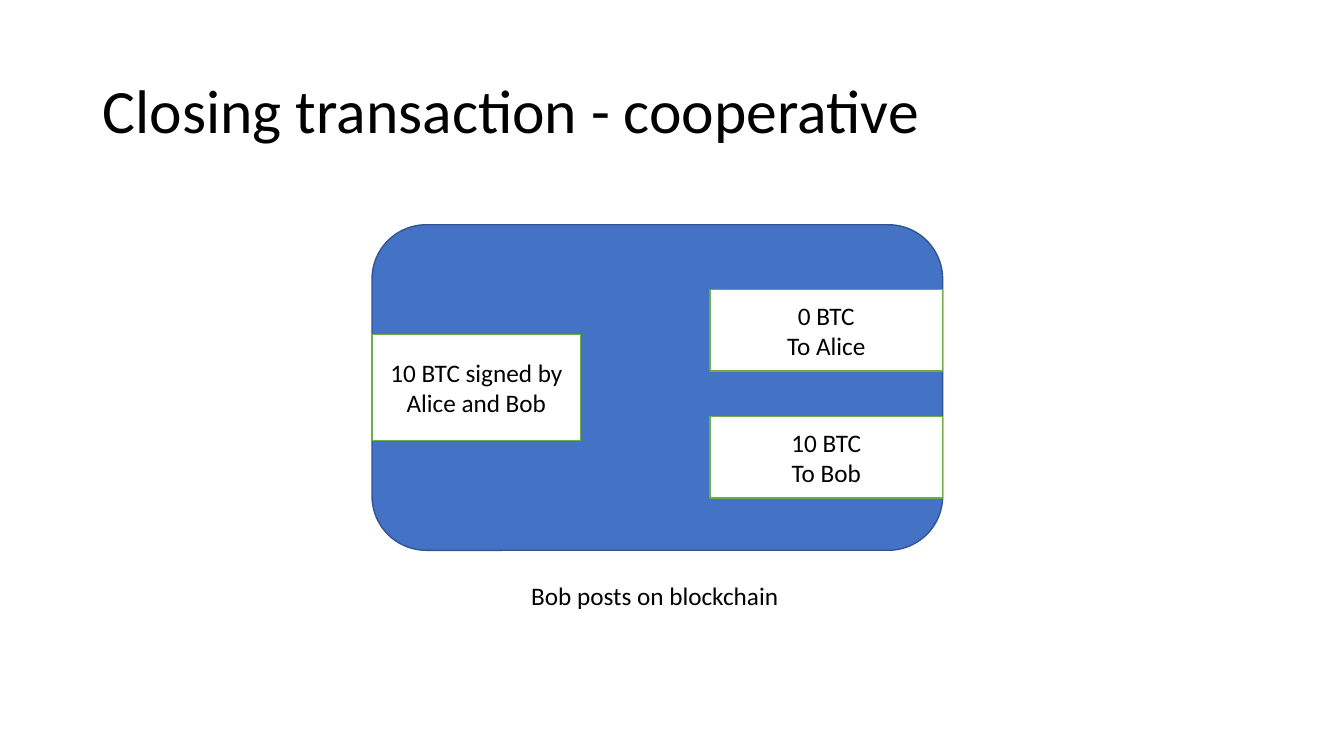
import pptx
import pptx.dml.color
import pptx.enum.shapes
import pptx.enum.text
import pptx.util

Inches = pptx.util.Inches
RGBColor = pptx.dml.color.RGBColor
Shape = pptx.enum.shapes.MSO_SHAPE
Align = pptx.enum.text.PP_ALIGN
Anchor = pptx.enum.text.MSO_ANCHOR

TITLE = "Closing transaction - cooperative"
CAPTION = "Bob posts on blockchain"
INPUT = ["10 BTC signed by Alice and Bob"]
OUTPUTS = [["0 BTC", "To Alice"], ["10 BTC", "To Bob"]]

BLACK = RGBColor(0x00, 0x00, 0x00)
WHITE = RGBColor(0xFF, 0xFF, 0xFF)
BLUE = RGBColor(0x44, 0x72, 0xC4)
DARK_BLUE = RGBColor(0x32, 0x54, 0x91)
GREEN = RGBColor(0x70, 0xAD, 0x47)

# Left, top, width, height in inches
TRANSACTION = (3.69, 2.23, 5.66, 3.23)
INPUT_TOP, INPUT_WIDTH, INPUT_HEIGHT = 3.32, 2.07, 1.05
OUTPUT_TOP, OUTPUT_WIDTH, OUTPUT_HEIGHT = 2.87, 2.31, 0.81
OUTPUT_STEP = 1.26


def write_text(shape, lines, size=18, align=Align.LEFT, anchor=Anchor.MIDDLE,
               wrap=True, line_spacing=None):
    frame = shape.text_frame
    frame.word_wrap = wrap
    frame.vertical_anchor = anchor
    frame.text = "\n".join(lines)
    for paragraph in frame.paragraphs:
        paragraph.alignment = align
        paragraph.line_spacing = line_spacing
        paragraph.font.name = "Calibri"
        paragraph.font.size = pptx.util.Pt(size)
        paragraph.font.color.rgb = BLACK


def add_box(slide, kind, bounds, fill, line):
    shape = slide.shapes.add_shape(kind, *map(Inches, bounds))
    shape.shadow.inherit = False
    shape.fill.solid()
    shape.fill.fore_color.rgb = fill
    shape.line.color.rgb = line
    shape.line.width = pptx.util.Pt(1)
    return shape


def add_label_box(slide, lines, bounds):
    box = add_box(slide, Shape.RECTANGLE, bounds, WHITE, GREEN)
    write_text(box, lines, align=Align.CENTER)


def main():
    presentation = pptx.Presentation()
    presentation.slide_width = Inches(13.33)
    presentation.slide_height = Inches(7.5)
    slide = presentation.slides.add_slide(presentation.slide_layouts[5])

    title = slide.shapes.title
    title.left, title.top = Inches(0.92), Inches(0.4)
    title.width, title.height = Inches(11.5), Inches(1.45)
    write_text(title, [TITLE], size=44, line_spacing=0.9)

    add_box(slide, Shape.ROUNDED_RECTANGLE, TRANSACTION, BLUE, DARK_BLUE)
    left, _, width, _ = TRANSACTION
    add_label_box(slide, INPUT, (left, INPUT_TOP, INPUT_WIDTH, INPUT_HEIGHT))
    output_left = left + width - OUTPUT_WIDTH
    for index, lines in enumerate(OUTPUTS):
        top = OUTPUT_TOP + index * OUTPUT_STEP
        add_label_box(slide, lines, (output_left, top, OUTPUT_WIDTH, OUTPUT_HEIGHT))

    caption = slide.shapes.add_textbox(*map(Inches, (5.17, 5.71, 2.68, 0.4)))
    write_text(caption, [CAPTION], anchor=Anchor.TOP, wrap=False)
    caption.text_frame.auto_size = pptx.enum.text.MSO_AUTO_SIZE.SHAPE_TO_FIT_TEXT

    presentation.save("out.pptx")


if __name__ == "__main__":
    main()
